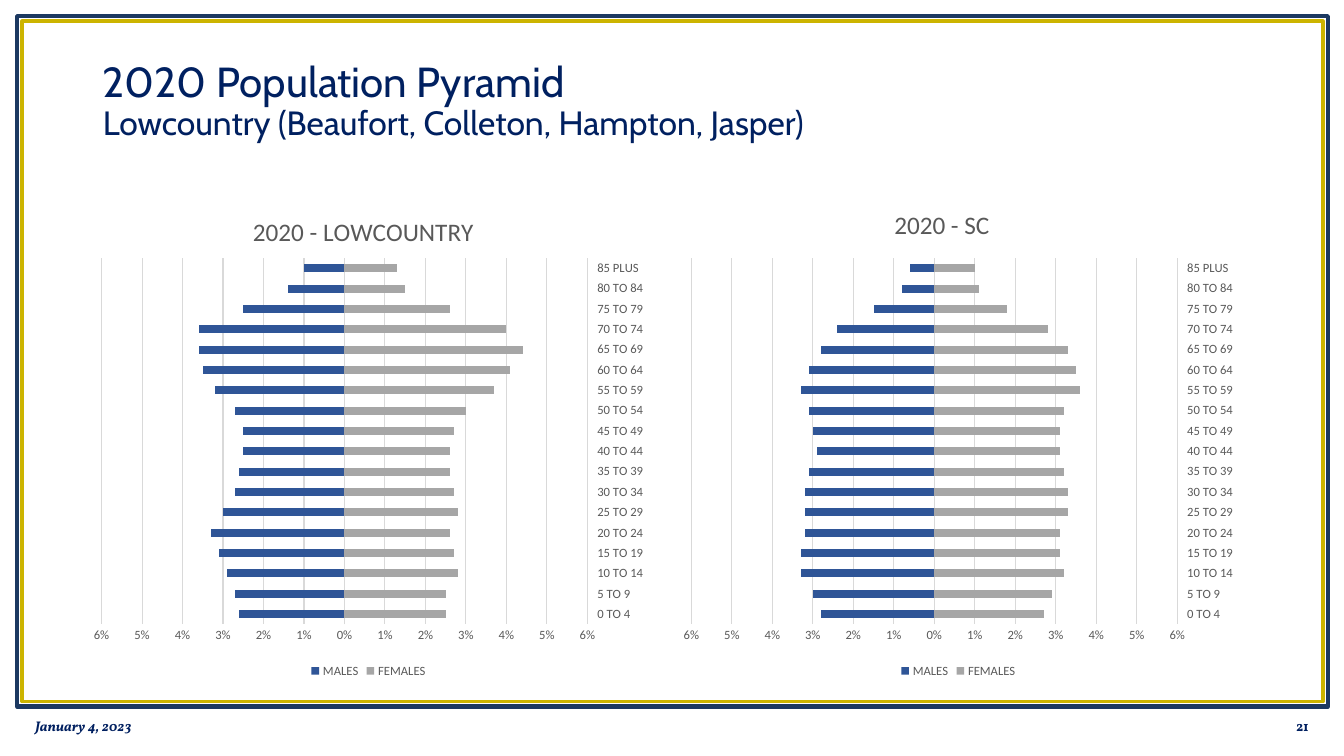
from lxml import etree
from pptx import Presentation
from pptx.chart.data import CategoryChartData as ChartData
from pptx.dml.color import RGBColor as Rgb
from pptx.enum.chart import XL_CHART_TYPE as Kind, XL_LEGEND_POSITION as Spot
from pptx.enum.chart import XL_TICK_LABEL_POSITION as Label, XL_TICK_MARK as Tick
from pptx.enum.shapes import MSO_SHAPE as Shape
from pptx.enum.text import MSO_ANCHOR as Anchor, PP_ALIGN as Align
from pptx.oxml.ns import qn
from pptx.util import Inches, Pt

HUES = {"navy": "002060", "frame": "1C3961", "gold": "CCB400", "text": "595959",
        "grid": "D9D9D9", "male": "2F5597", "female": "A6A6A6"}


def style(font, size, face, hue):
    font.size = Pt(size)
    font.name = face
    font.color.rgb = Rgb.from_string(HUES[hue])


def place(node, index, **spots):
    for old in node.findall(qn("c:layout")):
        node.remove(old)
    layout = etree.Element(qn("c:layout"))
    manual = etree.SubElement(layout, qn("c:manualLayout"))
    for tag, val in spots.items():
        etree.SubElement(manual, qn("c:" + tag), val=str(val))
    node.insert(index, layout)


deck = Presentation()
deck.slide_width = Inches(13.33)
deck.slide_height = Inches(7.5)
slide = deck.slides.add_slide(deck.slide_layouts[5])

for left, top, width, height, hue, line in [
        (0.17, 0.16, 13, 6.85, "frame", 3), (0.22, 0.21, 12.9, 6.75, "gold", 2.5)]:
    frame = slide.shapes.add_shape(
        Shape.RECTANGLE, Inches(left), Inches(top), Inches(width), Inches(height))
    frame.shadow.inherit = False
    frame.fill.background()
    frame.line.color.rgb = Rgb.from_string(HUES[hue])
    frame.line.width = Pt(line)

title = slide.shapes.title
title.left, title.top = Inches(0.92), Inches(0.4)
title.width, title.height = Inches(11.5), Inches(1.23)
title.text_frame.vertical_anchor = Anchor.MIDDLE
para = title.text_frame.paragraphs[0]
para.alignment = Align.LEFT
para.line_spacing = 0.9
run = para.add_run()
run.text = "2020 Population Pyramid"
style(run.font, 30, "Cabin", "navy")
para.add_line_break()
run = para.add_run()
run.text = "Lowcountry (Beaufort, Colleton, Hampton, Jasper)"
style(run.font, 24, "Cabin", "navy")

for left, text, align, slant in [
        (0.25, "January 4, 2023", Align.LEFT, True), (10.08, "21", Align.RIGHT, False)]:
    box = slide.shapes.add_textbox(Inches(left), Inches(7), Inches(3), Inches(0.4))
    box.text_frame.word_wrap = True
    box.text_frame.vertical_anchor = Anchor.MIDDLE
    para = box.text_frame.paragraphs[0]
    para.alignment = align
    run = para.add_run()
    run.text = text
    style(run.font, 10, "Vollkorn", "navy")
    run.font.bold = True
    run.font.italic = slant

ages = [f"{low} TO {low + 4}" for low in range(0, 85, 5)] + ["85 PLUS"]
charts = [
    (0.82, "2020 - LOWCOUNTRY", 0.29, 0.045,
     [2.6, 2.7, 2.9, 3.1, 3.3, 3, 2.7, 2.6, 2.5, 2.5, 2.7, 3.2, 3.5, 3.6, 3.6, 2.5, 1.4, 1],
     [2.5, 2.5, 2.8, 2.7, 2.6, 2.8, 2.7, 2.6, 2.6, 2.7, 3, 3.7, 4.1, 4.4, 4, 2.6, 1.5, 1.3]),
    (6.67, "2020 - SC", 0.38, 0.03,
     [2.8, 3, 3.3, 3.3, 3.2, 3.2, 3.2, 3.1, 2.9, 3, 3.1, 3.3, 3.1, 2.8, 2.4, 1.5, 0.8, 0.6],
     [2.7, 2.9, 3.2, 3.1, 3.1, 3.3, 3.3, 3.2, 3.1, 3.1, 3.2, 3.6, 3.5, 3.3, 2.8, 1.8, 1.1, 1]),
]
for left, name, x, y, males, females in charts:
    data = ChartData(number_format="0%;0%")
    data.categories = ages
    data.add_series("MALES", [round(-val / 100, 3) for val in males])
    data.add_series("FEMALES", [round(val / 100, 3) for val in females])
    chart = slide.shapes.add_chart(
        Kind.BAR_STACKED, Inches(left), Inches(1.86), Inches(5.67), Inches(4.91), data).chart
    style(chart.font, 9, "Calibri", "text")

    chart.has_title = True
    head = chart.chart_title
    run = head.text_frame.paragraphs[0].add_run()
    run.text = name
    style(run.font, 18, "Calibri", "text")
    run.font.bold = False
    place(head.element, 1, xMode="edge", yMode="edge", x=x, y=y)
    area = chart.element.find(".//" + qn("c:plotArea"))
    place(area, 0, layoutTarget="inner", xMode="edge", yMode="edge",
          x=0.033, y=0.143, w=0.85, h=0.74)

    chart.has_legend = True
    chart.legend.position = Spot.BOTTOM
    chart.legend.include_in_layout = False
    style(chart.legend.font, 9, "Calibri", "text")

    plot = chart.plots[0]
    plot.gap_width = 150
    plot.overlap = 100
    plot.vary_by_categories = False
    for series, hue in zip(plot.series, ["male", "female"]):
        series.invert_if_negative = False
        series.format.fill.solid()
        series.format.fill.fore_color.rgb = Rgb.from_string(HUES[hue])

    rows, scale = chart.category_axis, chart.value_axis
    for axis in (rows, scale):
        axis.major_tick_mark = axis.minor_tick_mark = Tick.NONE
        style(axis.tick_labels.font, 9, "Calibri", "text")
    rows.tick_label_position = Label.HIGH
    scale.minimum_scale, scale.maximum_scale = -0.06, 0.06
    scale.major_unit = 0.01
    scale.tick_labels.number_format = "0%;0%"
    scale.tick_labels.number_format_is_linked = False
    scale.format.line.fill.background()
    for line in (rows.format.line, scale.major_gridlines.format.line):
        line.color.rgb = Rgb.from_string(HUES["grid"])
        line.width = Pt(0.75)

deck.save("out.pptx")
